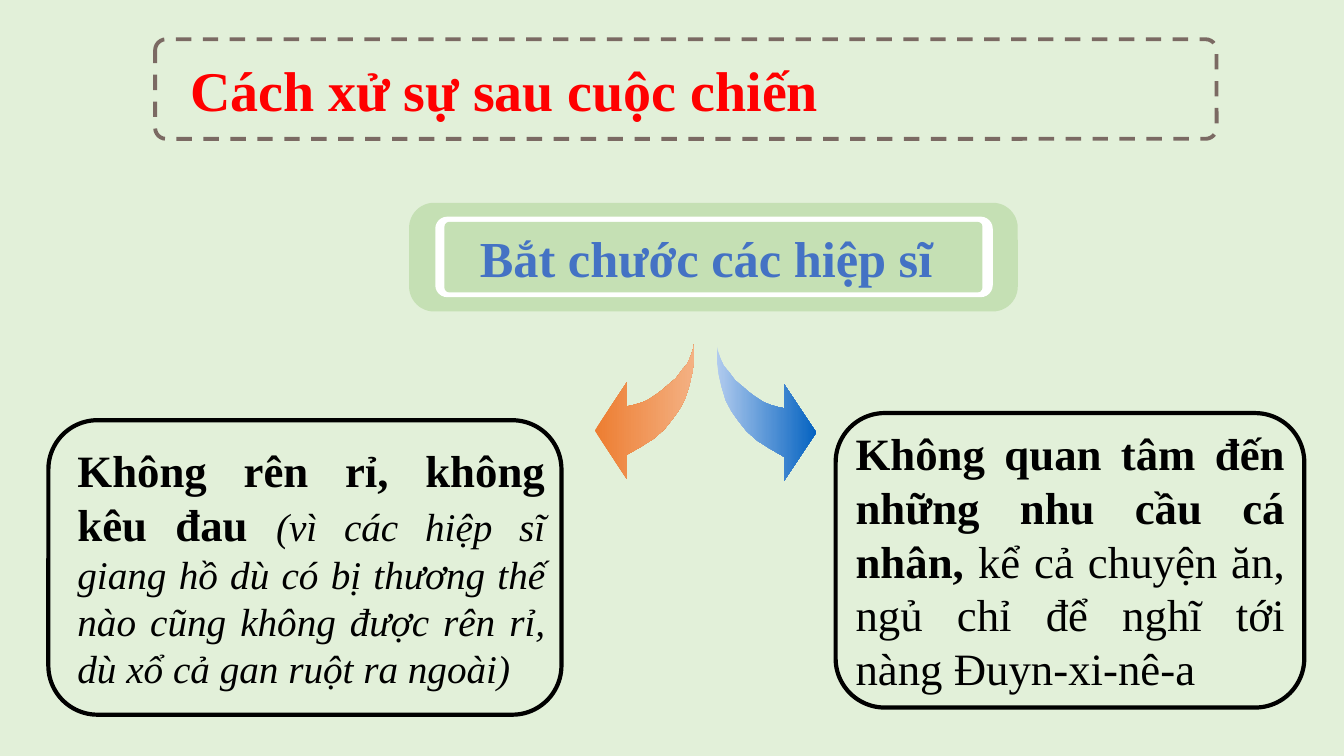
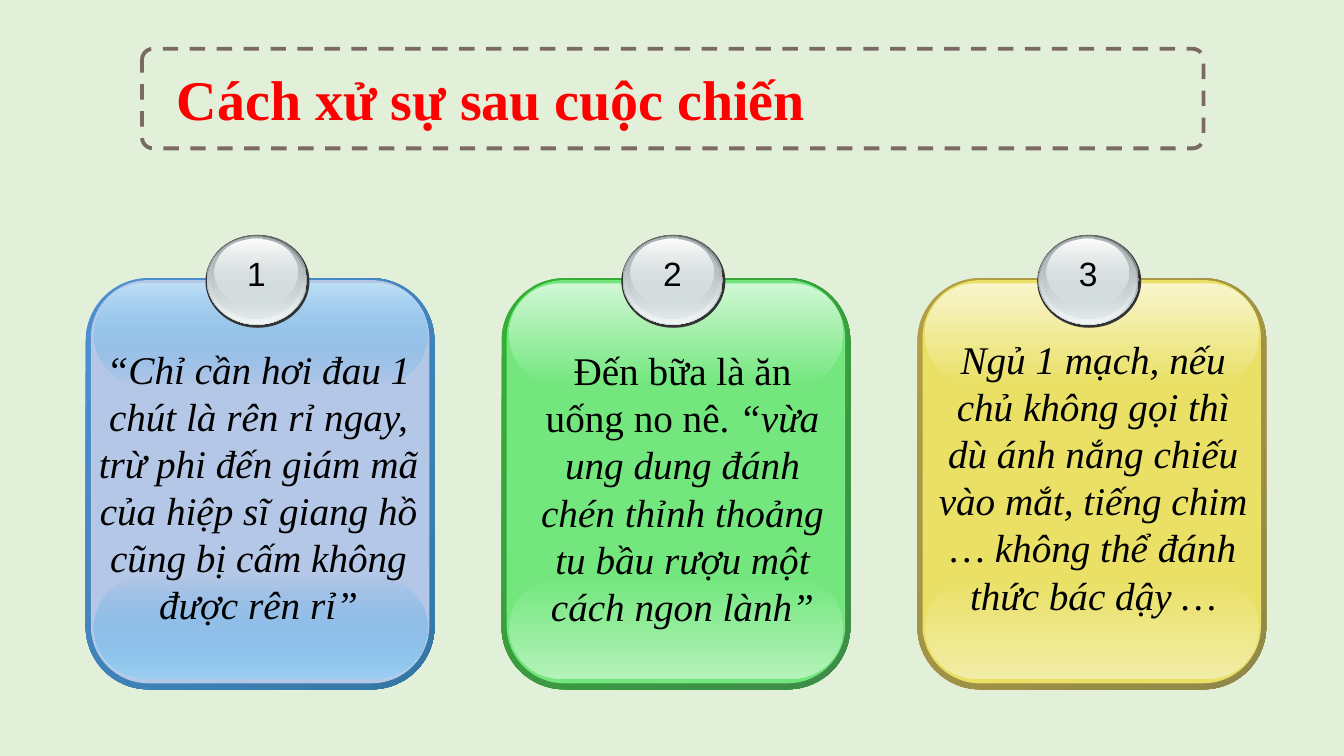
"""Two slides on how the knight and his squire behave after the battle."""
from lxml import etree
from pptx import Presentation
from pptx.dml.color import RGBColor
from pptx.enum.dml import MSO_LINE
from pptx.enum.shapes import MSO_SHAPE
from pptx.enum.text import MSO_ANCHOR, PP_ALIGN
from pptx.oxml.ns import qn
from pptx.util import Cm, Pt

ROUNDED, OVAL = MSO_SHAPE.ROUNDED_RECTANGLE, MSO_SHAPE.OVAL
DASH = MSO_LINE.DASH
TOP, MIDDLE = MSO_ANCHOR.TOP, MSO_ANCHOR.MIDDLE
LEFT, CENTER, JUSTIFY = PP_ALIGN.LEFT, PP_ALIGN.CENTER, PP_ALIGN.JUSTIFY

COLORS = {
    "page": "E2F0D9", "title": "FF0000", "frame": "7B6A63",
    "ink": "000000", "white": "FFFFFF", "banner": "C5E0B4", "banner text": "4472C4",
    "orange": "ED7D31", "pale orange": "F4B183",
    "blue": "0563C1", "pale blue": "B1CBEE",
    "badge edge": "333333", "badge dark": "636869", "badge grey": "AAB2B3",
    "badge light": "D6E1E2", "badge pale": "F1F5F5",
    "sky rim": "4E91D4", "sky rim end": "3477A4", "sky": "B4C7E7",
    "sky glow": "3CA1E6", "sky top": "BEE0F7", "sky bottom": "9BCFF2",
    "green rim": "34B034", "green rim end": "3F8B4A", "green": "73E77E",
    "green top": "D0F7D4", "green bottom": "B3F2B9",
    "gold rim": "B59F43", "gold rim end": "8F8849", "gold": "E9E065",
    "gold top": "F8F5CC", "gold bottom": "F2EDA6",
}
RGB = {name: RGBColor.from_string(value) for name, value in COLORS.items()}

SERIF = {"name": "Times New Roman", "size": Pt(28)}
ITALIC = {**SERIF, "italic": True}
LARGE = {**SERIF, "size": Pt(32)}
LARGE_BOLD = {**LARGE, "bold": True}
TITLE = {**SERIF, "size": Pt(40), "bold": True}
BANNER = {**SERIF, "size": Pt(36), "bold": True}
NUMBER = {"name": "Arial", "size": Pt(24)}


def paint(shape, fill=None, angle=0, line=None, width=0):
    """Fill with a colour name or (name, opacity) stops, and outline."""
    shape.shadow.inherit = False
    if fill is None:
        shape.fill.background()
    elif isinstance(fill, str):
        shape.fill.solid()
        shape.fill.fore_color.rgb = RGB[fill]
    else:
        shape.fill.gradient()
        shape.fill.gradient_angle = angle
        for stop, (name, _) in zip(shape.fill.gradient_stops, fill):
            stop.color.rgb = RGB[name]
        tints = shape.element.spPr.find(qn("a:gradFill")).iter(qn("a:srgbClr"))
        for tint, (_, opacity) in zip(list(tints), fill):
            if opacity < 100:
                etree.SubElement(tint, qn("a:alpha")).set("val", str(opacity * 1000))
    if line is None:
        shape.line.fill.background()
    else:
        shape.line.color.rgb = RGB[line]
        shape.line.width = Pt(width)


def write(shape, runs, align, color="ink", **layout):
    """Write formatted runs as one paragraph."""
    frame = shape.text_frame
    for key, value in {"word_wrap": True, "vertical_anchor": MIDDLE, **layout}.items():
        setattr(frame, key, value)
    paragraph = frame.paragraphs[0]
    paragraph.alignment = align
    for text, style in runs:
        run = paragraph.add_run()
        run.text = text
        run.font.color.rgb = RGB[color]
        for key, value in style.items():
            setattr(run.font, key, value)


prs = Presentation()
prs.slide_width, prs.slide_height = Cm(33.87), Cm(19.05)

slides = []
for left, top in [(3.91, 0.99), (3.58, 1.23)]:
    slide = prs.slides.add_slide(prs.slide_layouts[6])
    slide.background.fill.solid()
    slide.background.fill.fore_color.rgb = RGB["page"]
    heading = slide.shapes.add_shape(ROUNDED, Cm(left), Cm(top), Cm(26.75), Cm(2.51))
    heading.adjustments[0] = 0.11
    paint(heading, line="frame", width=2.75)
    heading.line.dash_style = DASH
    write(heading, [("Cách xử sự sau cuộc chiến", TITLE)], LEFT, "title", margin_left=Cm(0.8))
    slides.append(slide)
knight, squire = slides

for left, top, width, height, radius, fill in [
    (10.31, 5.11, 15.34, 2.74, 0.23, "banner"),
    (10.97, 5.46, 14.05, 2.03, 0.15, "white"),
    (11.2, 5.59, 13.56, 1.78, 0.07, "banner"),
]:
    banner = knight.shapes.add_shape(ROUNDED, Cm(left), Cm(top), Cm(width), Cm(height))
    banner.adjustments[0] = radius
    paint(banner, fill)
write(banner, [("Bắt chước các hiệp sĩ", BANNER)], CENTER, "banner text",
      margin_left=0, margin_right=Cm(0.36), margin_top=0, margin_bottom=0)

ARROW = [
    (0, 0), (0, 0.38), (0.05, 0.74), (0.13, 1.07), (0.23, 1.4), (0.38, 1.68),
    (0.56, 1.93), (0.76, 2.18), (1.02, 2.41), (1.35, 2.62), (1.7, 2.82), (1.7, 3.43),
    (2.51, 2.21), (1.7, 0.99), (1.7, 1.6), (1.55, 1.57), (1.37, 1.52), (1.19, 1.45),
    (0.99, 1.32), (0.81, 1.19), (0.64, 1.04), (0.46, 0.89), (0.33, 0.71),
    (0.18, 0.53), (0.1, 0.36), (0.03, 0.15),
]
for tail, top, side, stops in [
    (17.5, 8.64, -1, [("orange", 100), ("pale orange", 100)]),
    (18.06, 8.69, 1, [("pale blue", 100), ("blue", 100)]),
]:
    points = [(Cm(tail + side * x), Cm(top + y)) for x, y in ARROW]
    outline = knight.shapes.build_freeform(*points[0])
    outline.add_line_segments(points[1:], close=True)
    paint(outline.convert_to_shape(), stops)

for left, top, width, inset_left, inset_right, runs in [
    (1.22, 10.59, 12.93, 0.37, 0.04, [
        ("Không rên rỉ, không kêu đau ", LARGE_BOLD),
        ("(vì các hiệp sĩ giang hồ dù có bị thương thế nào cũng không được rên rỉ, "
         "dù xổ cả gan ruột ra ngoài)", ITALIC)]),
    (21.06, 10.41, 11.81, 0.14, 0.12, [
        ("Không quan tâm đến những nhu cầu cá nhân, ", LARGE_BOLD),
        ("kể cả chuyện ăn, ngủ chỉ để nghĩ tới nàng Đuyn-xi-nê-a", LARGE)]),
]:
    conduct = knight.shapes.add_shape(ROUNDED, Cm(left), Cm(top), Cm(width), Cm(7.42))
    paint(conduct, line="ink", width=3)
    write(conduct, runs, JUSTIFY, margin_left=Cm(inset_left), margin_right=Cm(inset_right),
          margin_top=0, margin_bottom=0)

BADGE = [
    (3.02, 5.92, 2.62, 2.34, "badge edge"),
    (3.05, 5.92, 2.53, 2.26, [("badge dark", 100), ("badge light", 100)]),
    (3.07, 5.94, 2.46, 2.21, [("badge light", 0), ("badge pale", 100)]),
    (3.12, 5.97, 2.34, 2.06, [("badge grey", 100), ("badge light", 48)]),
    (3.25, 6.02, 2.08, 1.68, [("white", 100), ("badge light", 38)]),
]
CARDS = [
    ("sky", ("sky glow", 0), (-0.18, 8.58, 9.07), [
        ("“Chỉ cần hơi đau 1 chút là rên rỉ ngay, trừ phi đến giám mã của hiệp sĩ "
         "giang hồ cũng bị cấm không được rên rỉ”", ITALIC)]),
    ("green", ("green", 100), (0.65, 8.61, 7.82), [
        ("Đến bữa là ăn uống no nê. ", SERIF),
        ("“vừa ung dung đánh chén thỉnh thoảng tu bầu rượu một cách ngon lành”", ITALIC)]),
    ("gold", ("gold", 100), (0.25, 8.33, 8.36), [
        ("Ngủ 1 mạch, nếu chủ không gọi thì dù ánh nắng chiếu vào mắt, tiếng chim "
         "… không thể đánh thức bác dậy …", ITALIC)]),
]
for index, (hue, glow, (text_x, text_y, text_width), runs) in enumerate(CARDS):
    card_x = 2.16 + 10.48 * index
    rim = [(f"{hue} rim", 100), (f"{hue} rim end", 100)]
    layers = [
        (ROUNDED, 0.18, 315, 0, 7.01, 8.79, 10.36, rim),
        (ROUNDED, 0.17, 0, 0.13, 7.06, 8.53, 10.16, hue),
        (ROUNDED, 0.5, 270, 0.2, 14.53, 8.41, 2.57, [glow, (f"{hue} bottom", 100)]),
        (ROUNDED, 0.5, 270, 0.2, 7.14, 8.41, 2.57, [(f"{hue} top", 100), glow]),
    ] + [(OVAL, None, 270, *ring) for ring in BADGE]
    for kind, radius, angle, x, y, width, height, fill in layers:
        layer = squire.shapes.add_shape(kind, Cm(card_x + x), Cm(y), Cm(width), Cm(height))
        if radius:
            layer.adjustments[0] = radius
        paint(layer, fill, angle)
    number = squire.shapes.add_textbox(Cm(card_x + 3.58), Cm(6.25), Cm(1.45), Cm(1.28))
    write(number, [(str(index + 1), NUMBER)], CENTER, vertical_anchor=TOP)
    behaviour = squire.shapes.add_textbox(
        Cm(card_x + text_x), Cm(text_y), Cm(text_width), Cm(7.44))
    write(behaviour, runs, CENTER, vertical_anchor=TOP)

prs.save("out.pptx")
